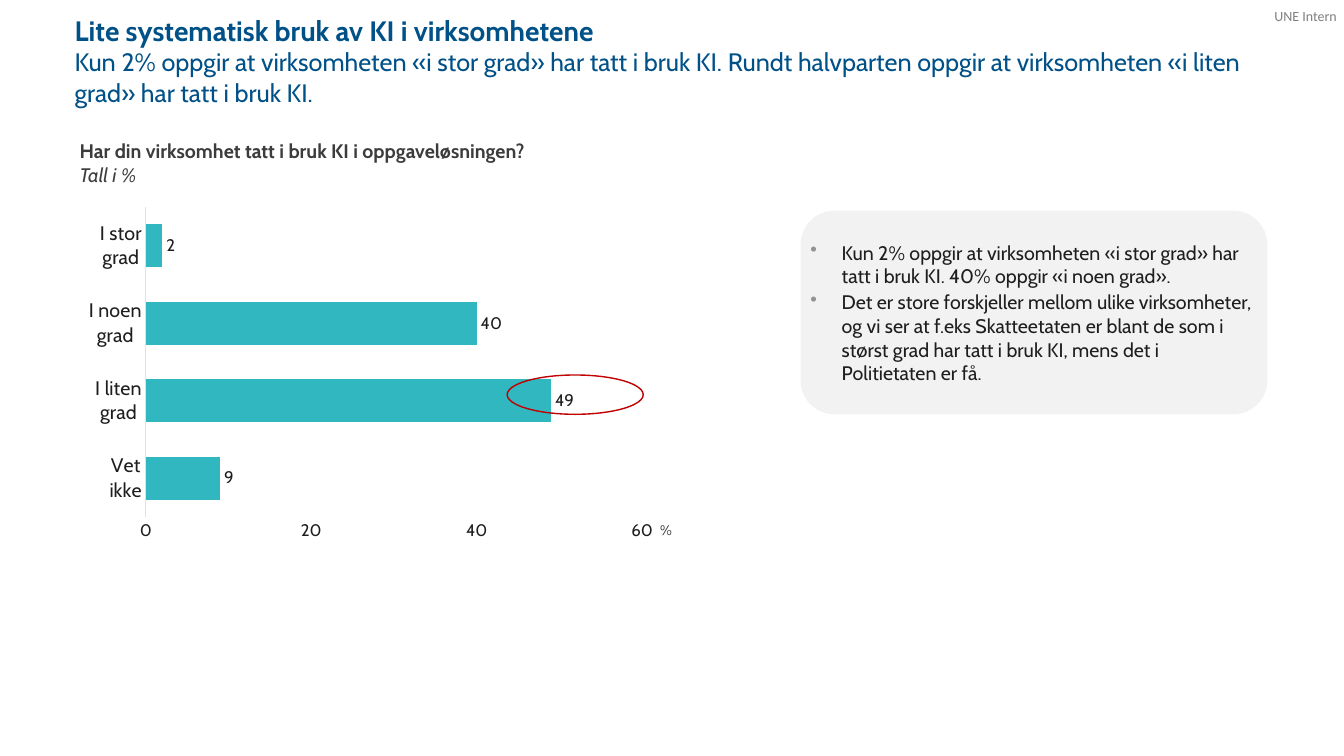
from dataclasses import dataclass

from lxml.etree import SubElement
from pptx import Presentation
from pptx.chart.data import CategoryChartData
from pptx.dml.color import RGBColor
from pptx.enum.chart import XL_CHART_TYPE as ChartType, XL_LABEL_POSITION as LabelPosition
from pptx.enum.chart import XL_TICK_MARK as TickMark
from pptx.enum.shapes import MSO_SHAPE as Shape
from pptx.enum.text import MSO_ANCHOR as Anchor, MSO_AUTO_SIZE as AutoSize, PP_ALIGN as Align
from pptx.oxml import parse_xml
from pptx.oxml.ns import nsdecls, qn
from pptx.util import Inches, Pt


@dataclass(frozen=True)
class Theme:
    font: str = "Cabin"
    label_font: str = "Calibri"
    title: str = "005187"
    heading: str = "3C3C3C"
    text: str = "1E1E1E"
    muted: str = "7F7F7F"
    bullet: str = "939393"
    bar: str = "30B7C0"
    axis: str = "E2E2E2"
    panel: str = "F2F2F2"
    ring: str = "C00000"
    title_size: int = 20
    subtitle_size: int = 18
    body_size: int = 14
    value_size: int = 12
    small_size: int = 10


theme = Theme()


def set_font(font, size, color, name=theme.font, **format_values):
    values = {"name": name, "size": Pt(size), "bold": False, **format_values}
    for key, value in values.items():
        setattr(font, key, value)
    font.color.rgb = RGBColor.from_string(color)


def write_lines(frame, lines):
    """Write one paragraph for each (text, size, color, format values)."""
    for index, (text, size, color, format_values) in enumerate(lines):
        para = frame.add_paragraph() if index else frame.paragraphs[0]
        para.alignment = Align.LEFT
        span = para.add_run()
        span.text = text
        set_font(span.font, size, color, **format_values)


deck = Presentation()
deck.slide_width, deck.slide_height = Inches(13.33), Inches(7.5)
page = deck.slides.add_slide(deck.slide_layouts[5])

# Title and subtitle
title = page.shapes.title
title.left, title.top, title.width, title.height = map(Inches, (0.64, 0.08, 11.95, 0.68))
title.text_frame.auto_size = AutoSize.NONE
title.text_frame.vertical_anchor = Anchor.TOP
write_lines(title.text_frame, [
    ("Lite systematisk bruk av KI i virksomhetene", theme.title_size, theme.title, {"bold": True}),
    ("Kun 2% oppgir at virksomheten «i stor grad» har tatt i bruk KI. Rundt halvparten oppgir "
     "at virksomheten «i liten grad» har tatt i bruk KI.", theme.subtitle_size, theme.title, {}),
])

# Chart
chart_data = CategoryChartData()
chart_data.categories = ["Vet ikke", "I liten grad", "I noen grad", "I stor grad"]
chart_data.add_series("Series 1", [9, 49, 40, 2])
chart = page.shapes.add_chart(
    ChartType.BAR_CLUSTERED, *map(Inches, (0.88, 2.02, 5.66, 3.38)), chart_data).chart
chart.has_legend = chart.has_title = False
set_font(chart.font, theme.small_size, theme.text)

plot = chart.plots[0]
plot.gap_width = 80
plot.vary_by_categories = False
fill = plot.series[0].format.fill
fill.solid()
fill.fore_color.rgb = RGBColor.from_string(theme.bar)
plot.has_data_labels = True
labels = plot.data_labels
labels.show_value = True
labels.position = LabelPosition.OUTSIDE_END
set_font(labels.font, theme.value_size, theme.text)

for axis, size in ((chart.category_axis, theme.body_size), (chart.value_axis, theme.value_size)):
    axis.major_tick_mark = axis.minor_tick_mark = TickMark.NONE
    axis.has_major_gridlines = False
    set_font(axis.tick_labels.font, size, theme.text)
chart.category_axis.format.line.color.rgb = RGBColor.from_string(theme.axis)
chart.category_axis.format.line.width = Pt(0.75)
scale = {"minimum_scale": 0, "maximum_scale": 60, "major_unit": 20}
for key, value in scale.items():
    setattr(chart.value_axis, key, value)
chart.value_axis.format.line.fill.background()

plot_area = chart.element.find(".//" + qn("c:plotArea"))
for old_layout in plot_area.findall(qn("c:layout")):
    plot_area.remove(old_layout)
layout = parse_xml(f"<c:layout {nsdecls('c')}><c:manualLayout/></c:layout>")
plot_area.insert(0, layout)
placement = {"layoutTarget": "inner", "xMode": "edge", "yMode": "edge",
             "x": 0.1, "y": 0.01, "w": 0.87, "h": 0.91}
for tag, value in placement.items():
    SubElement(layout[0], qn(f"c:{tag}")).set("val", str(value))

# Text boxes: place, wrap, margin, lines
text_boxes = [
    ((12.64, 0.07, 0.65, 0.17), False, 0,
     [("UNE Intern", theme.small_size, theme.muted, {"name": theme.label_font})]),
    ((0.69, 1.33, 4.65, 0.57), True, None,
     [("Har din virksomhet tatt i bruk KI i oppgaveløsningen?",
       theme.body_size, theme.heading, {"bold": True}),
      ("Tall i %", theme.body_size, theme.heading, {"italic": True})]),
    ((6.45, 5.12, 0.3, 0.27), False, None, [("%", theme.small_size, theme.heading, {})]),
]
for place, wrap, margin, lines in text_boxes:
    frame = page.shapes.add_textbox(*map(Inches, place)).text_frame
    frame.word_wrap = wrap
    if margin is not None:
        frame.margin_left = frame.margin_top = frame.margin_right = frame.margin_bottom = margin
    write_lines(frame, lines)

# Ring around the highest value
ring = page.shapes.add_shape(Shape.OVAL, *map(Inches, (5.03, 3.72, 1.35, 0.39)))
ring.shadow.inherit = False
ring.fill.background()
ring.line.color.rgb = RGBColor.from_string(theme.ring)
ring.line.width = Pt(1)

# Findings panel
panel = page.shapes.add_shape(Shape.ROUNDED_RECTANGLE, *map(Inches, (7.94, 2.09, 4.63, 2.02)))
panel.shadow.inherit = False
panel.fill.solid()
panel.fill.fore_color.rgb = RGBColor.from_string(theme.panel)
panel.line.fill.background()
frame = panel.text_frame
frame.word_wrap = True
frame.vertical_anchor = Anchor.MIDDLE
frame.margin_left = frame.margin_top = frame.margin_right = frame.margin_bottom = 0
findings = [
    "Kun 2% oppgir at virksomheten «i stor grad» har tatt i bruk KI. 40% oppgir «i noen grad».",
    "Det er store forskjeller mellom ulike virksomheter, og vi ser at f.eks Skatteetaten er blant "
    "de som i størst grad har tatt i bruk KI, mens det i Politietaten er få.",
]
write_lines(frame, [(text, theme.body_size, theme.text, {}) for text in findings])
frame.paragraphs[1].space_before = Pt(2)
for para in frame.paragraphs:
    properties = para._p.get_or_add_pPr()
    properties.set("marL", str(Inches(0.31)))
    properties.set("indent", str(-Inches(0.31)))
    bullet_color = SubElement(properties, qn("a:buClr"))
    SubElement(bullet_color, qn("a:srgbClr")).set("val", theme.bullet)
    SubElement(properties, qn("a:buChar")).set("char", "•")

deck.save("out.pptx")
